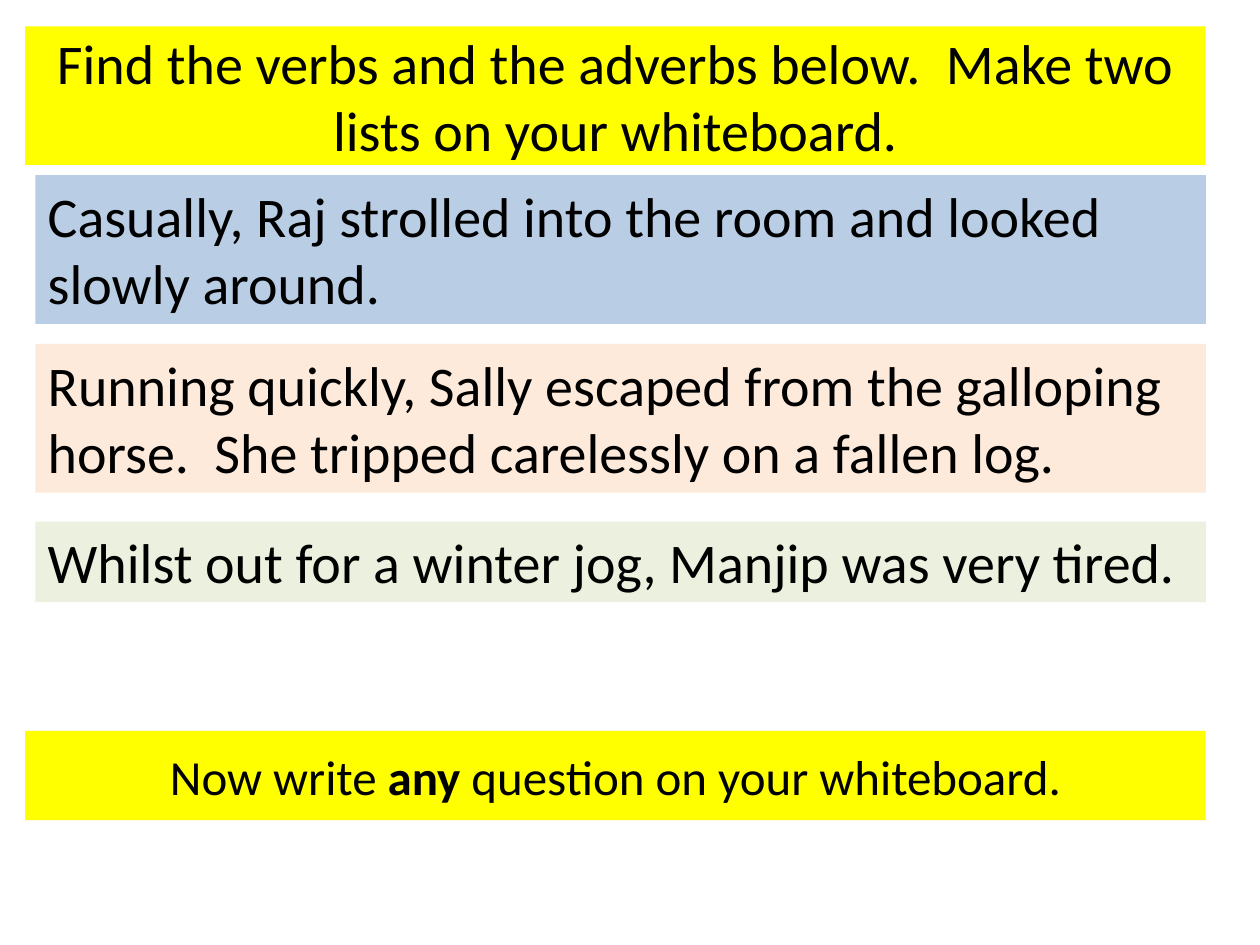
from pptx import Presentation
from pptx.dml.color import RGBColor
from pptx.enum.text import MSO_ANCHOR, MSO_AUTO_SIZE, PP_ALIGN
from pptx.util import Inches, Pt

COLORS = {"yellow": "FFFF00", "blue": "B9CDE5", "peach": "FDEADA",
          "green": "EBF1DE", "text": "000000"}
FONT = "Calibri"
RIGHT = 9.57
BANNER_LEFT, SENTENCE_LEFT = 0.2, 0.28

# (top, height, size, runs as (text, bold)), from top to bottom
BANNERS = [
    (0.21, 1.1, 32, [("Find the verbs and the adverbs below.  Make two lists on your whiteboard.", False)]),
    (5.8, 0.71, 28, [("Now write ", False), ("any", True),
                     (" question on your whiteboard.", False)]),
]
# (top, height, fill, text)
SENTENCES = [
    (1.39, 1.18, "blue", "Casually, Raj strolled into the room and looked slowly around."),
    (2.73, 1.18, "peach", "Running quickly, Sally escaped from the galloping horse.  "
                          "She tripped carelessly on a fallen log."),
    (4.14, 0.64, "green", "Whilst out for a winter jog, Manjip was very tired."),
]


def add_box(s, left, top, height, fill, size, runs):
    """Add a filled text box that reaches the common right edge."""
    sp = s.shapes.add_textbox(Inches(left), Inches(top), Inches(RIGHT - left), Inches(height))
    sp.fill.solid()
    sp.fill.fore_color.rgb = RGBColor.from_string(COLORS[fill])
    tf = sp.text_frame
    tf.word_wrap = True
    for text, bold in runs:
        r = tf.paragraphs[0].add_run()
        r.text = text
        r.font.name, r.font.size, r.font.bold = FONT, Pt(size), bold
        r.font.color.rgb = RGBColor.from_string(COLORS["text"])
    return tf


prs = Presentation()
prs.slide_width, prs.slide_height = Inches(10), Inches(7.5)
s = prs.slides.add_slide(prs.slide_layouts[6])

for top, height, size, runs in BANNERS:
    tf = add_box(s, BANNER_LEFT, top, height, "yellow", size, runs)
    tf.vertical_anchor = MSO_ANCHOR.MIDDLE
    tf.paragraphs[0].alignment = PP_ALIGN.CENTER

for top, height, fill, text in SENTENCES:
    tf = add_box(s, SENTENCE_LEFT, top, height, fill, 32, [(text, False)])
    tf.auto_size = MSO_AUTO_SIZE.SHAPE_TO_FIT_TEXT

prs.save("out.pptx")
